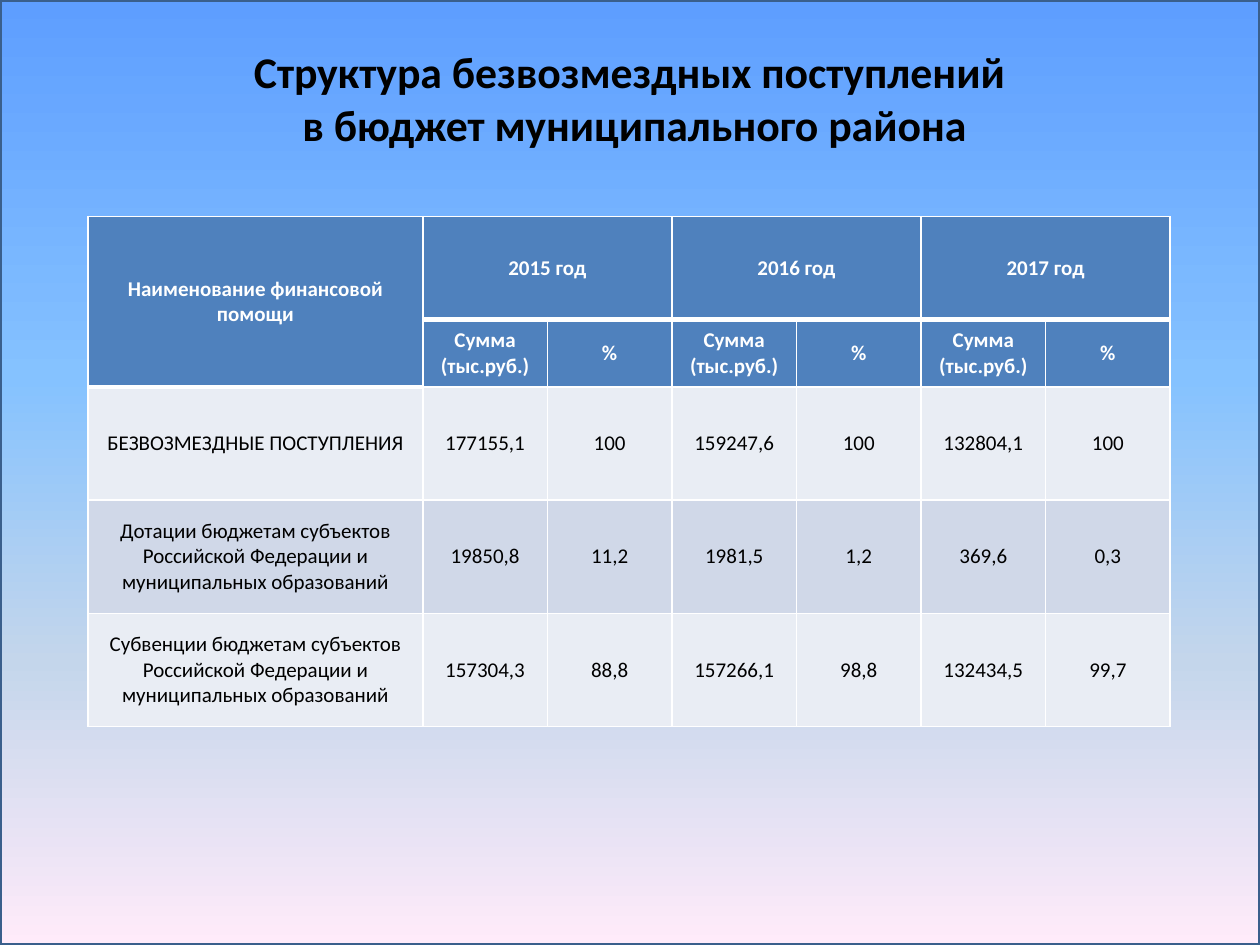
import copy
from dataclasses import dataclass

import lxml.etree
import pptx
import pptx.dml.color
import pptx.enum.shapes
import pptx.enum.text
import pptx.oxml.ns
import pptx.util

Pt = pptx.util.Pt
RGBColor = pptx.dml.color.RGBColor
qn = pptx.oxml.ns.qn

BLACK = RGBColor(0x00, 0x00, 0x00)
WHITE = RGBColor(0xFF, 0xFF, 0xFF)
FRAME_BLUE = RGBColor(0x3A, 0x5F, 0x8C)
HEADER_BLUE = RGBColor(0x4F, 0x81, 0xBD)
LIGHT_BAND = RGBColor(0xE9, 0xED, 0xF4)
DARK_BAND = RGBColor(0xD0, 0xD8, 0xE8)

FONT = "Calibri"
SLIDE_WIDTH, SLIDE_HEIGHT = Pt(720), Pt(540)
HEADER_ROWS = 2
NAME_WIDTH, VALUE_WIDTH = Pt(191.2), Pt(71.2)
ROW_HEIGHTS = [Pt(58.7), Pt(38.7)] + [Pt(64.7)] * 3
THIN, THICK = Pt(1), Pt(3)


@dataclass
class GradientStop:
    position: float
    color: RGBColor


@dataclass
class AidRow:
    name: str
    values: list[str]


SKY = [
    GradientStop(0, RGBColor(0x5E, 0x9E, 0xFF)),
    GradientStop(0.4, RGBColor(0x85, 0xC2, 0xFF)),
    GradientStop(0.7, RGBColor(0xC4, 0xD6, 0xEB)),
    GradientStop(1, RGBColor(0xFF, 0xEB, 0xFA)),
]
TITLE = "Структура безвозмездных поступлений \vв бюджет муниципального района"
NAME_HEADING = "Наименование финансовой помощи"
YEARS = ["2015 год", "2016 год", "2017 год"]
MEASURES = ["Сумма (тыс.руб.)", "%"]
AID_ROWS = [
    AidRow("БЕЗВОЗМЕЗДНЫЕ ПОСТУПЛЕНИЯ",
           ["177155,1", "100", "159247,6", "100", "132804,1", "100"]),
    AidRow("Дотации бюджетам субъектов Российской Федерации и муниципальных образований",
           ["19850,8", "11,2", "1981,5", "1,2", "369,6", "0,3"]),
    AidRow("Субвенции бюджетам субъектов Российской Федерации и муниципальных образований",
           ["157304,3", "88,8", "157266,1", "98,8", "132434,5", "99,7"]),
]


def write_centred(text_frame, text: str, size: int, color: RGBColor, bold: bool) -> None:
    text_frame.text = text
    for paragraph in text_frame.paragraphs:
        paragraph.alignment = pptx.enum.text.PP_ALIGN.CENTER
        for run in paragraph.runs:
            run.font.name = FONT
            run.font.size = Pt(size)
            run.font.bold = bold
            run.font.color.rgb = color


def add_background(slide, stops: list[GradientStop]) -> None:
    shape = slide.shapes.add_shape(
        pptx.enum.shapes.MSO_SHAPE.RECTANGLE, 0, 0, SLIDE_WIDTH, SLIDE_HEIGHT)
    shape.shadow.inherit = False
    shape.line.color.rgb = FRAME_BLUE
    shape.line.width = Pt(2)
    shape.fill.gradient()
    shape.fill.gradient_angle = 270
    stop_list = shape.element.spPr.find(qn("a:gradFill")).find(qn("a:gsLst"))
    while len(stop_list) < len(stops):
        stop_list.append(copy.deepcopy(stop_list[0]))
    for gradient_stop, stop in zip(shape.fill.gradient_stops, stops):
        gradient_stop.position = stop.position
        gradient_stop.color.rgb = stop.color


def add_title(slide) -> None:
    title = slide.shapes.add_textbox(Pt(22.3), Pt(22.3), Pt(680.4), Pt(67.7))
    title.text_frame.word_wrap = True
    write_centred(title.text_frame, TITLE, 25, BLACK, True)


def set_border(cell, side: str, width: int) -> None:
    properties = cell._tc.get_or_add_tcPr()
    line = lxml.etree.SubElement(properties, qn(f"a:ln{side}"), w=str(int(width)))
    fill = lxml.etree.SubElement(line, qn("a:solidFill"))
    lxml.etree.SubElement(fill, qn("a:srgbClr"), val=str(WHITE))


def has_thick_bottom(row: int, column: int) -> bool:
    return row == (HEADER_ROWS - 1 if column == 0 else 0)


def style_cell(cell, row: int, column: int) -> None:
    is_header = row < HEADER_ROWS
    top = THICK if has_thick_bottom(row - 1, column) else THIN
    is_merged_name = column == 0 and is_header
    bottom = THICK if has_thick_bottom(row, column) or is_merged_name else THIN
    if is_merged_name:
        top = THIN
    for side, width in zip("LRTB", (THIN, THIN, top, bottom)):
        set_border(cell, side, width)
    cell.fill.solid()
    band = LIGHT_BAND if (row - HEADER_ROWS) % 2 == 0 else DARK_BAND
    cell.fill.fore_color.rgb = HEADER_BLUE if is_header else band
    cell.vertical_anchor = pptx.enum.text.MSO_ANCHOR.MIDDLE


def add_aid_table(slide) -> None:
    column_count = 1 + len(YEARS) * len(MEASURES)
    widths = [NAME_WIDTH] + [VALUE_WIDTH] * (column_count - 1)
    table = slide.shapes.add_table(
        len(ROW_HEIGHTS), column_count, Pt(50.4), Pt(123.8),
        sum(widths), sum(ROW_HEIGHTS)).table
    for column, width in zip(table.columns, widths):
        column.width = width
    for row, height in zip(table.rows, ROW_HEIGHTS):
        row.height = height

    year_cells = [text for year in YEARS for text in (year, "")]
    texts = [[NAME_HEADING] + year_cells, [""] + MEASURES * len(YEARS)]
    texts += [[aid.name] + aid.values for aid in AID_ROWS]
    for row, row_texts in enumerate(texts):
        is_header = row < HEADER_ROWS
        for column, text in enumerate(row_texts):
            cell = table.cell(row, column)
            style_cell(cell, row, column)
            write_centred(cell.text_frame, text, 12,
                          WHITE if is_header else BLACK, is_header)

    table.cell(0, 0).merge(table.cell(HEADER_ROWS - 1, 0))
    for column in range(1, column_count, len(MEASURES)):
        table.cell(0, column).merge(table.cell(0, column + len(MEASURES) - 1))


def main() -> None:
    presentation = pptx.Presentation()
    presentation.slide_width = SLIDE_WIDTH
    presentation.slide_height = SLIDE_HEIGHT
    slide = presentation.slides.add_slide(presentation.slide_layouts[6])
    add_background(slide, SKY)
    add_title(slide)
    add_aid_table(slide)
    presentation.save("out.pptx")


if __name__ == "__main__":
    main()
